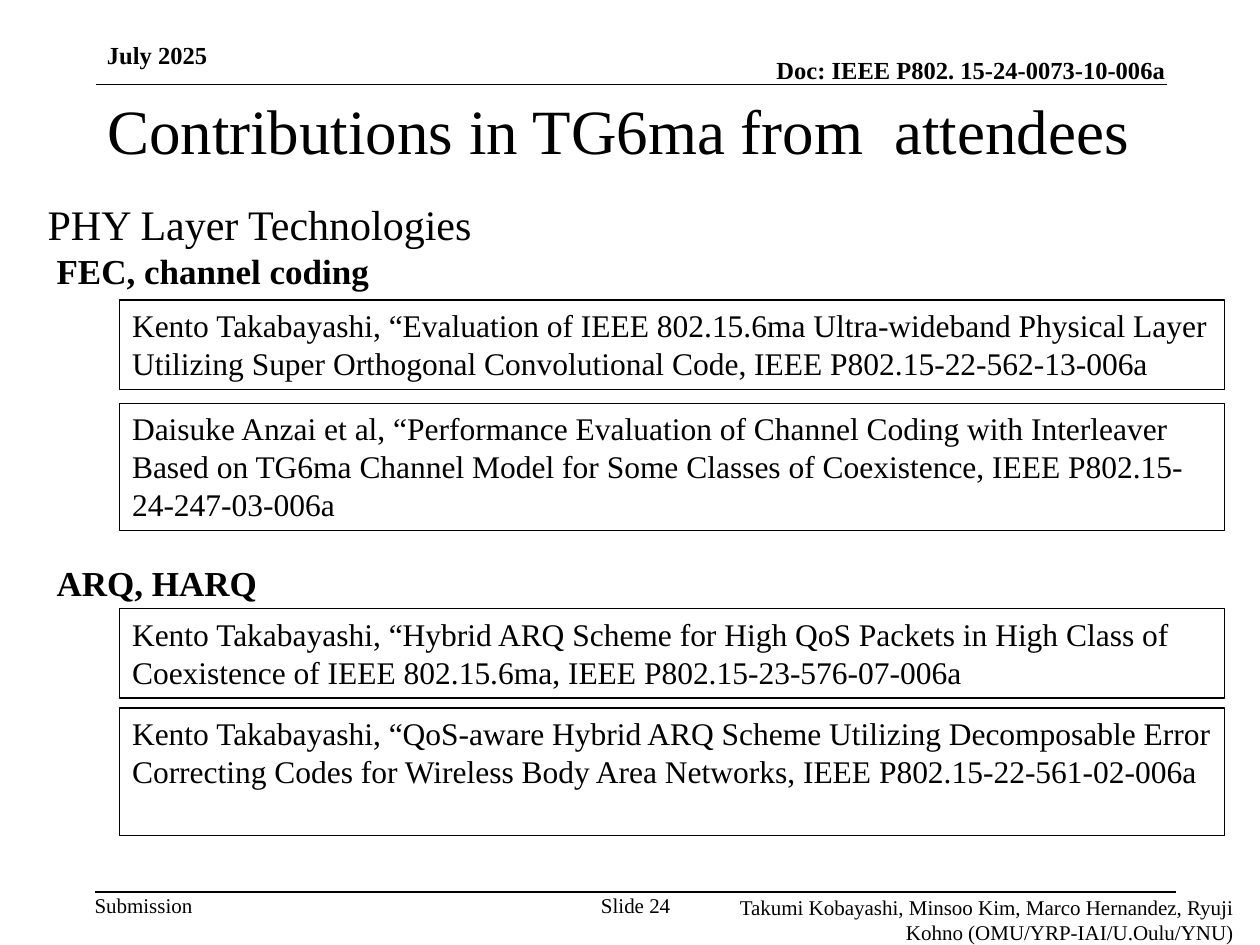
from lxml import etree
from pptx import Presentation
from pptx.dml.color import RGBColor
from pptx.enum.shapes import MSO_CONNECTOR, MSO_SHAPE
from pptx.enum.text import MSO_ANCHOR, MSO_AUTO_SIZE, PP_ALIGN
from pptx.oxml.ns import qn
from pptx.util import Inches, Pt

RECTANGLE = MSO_SHAPE.RECTANGLE
STRAIGHT = MSO_CONNECTOR.STRAIGHT
TOP, MIDDLE, BOTTOM = MSO_ANCHOR.TOP, MSO_ANCHOR.MIDDLE, MSO_ANCHOR.BOTTOM
LEFT, CENTER, RIGHT = PP_ALIGN.LEFT, PP_ALIGN.CENTER, PP_ALIGN.RIGHT
FIXED_SIZE = MSO_AUTO_SIZE.NONE
TITLE_ONLY = 5

COLORS = {"ink": "000000", "paper": "FFFFFF"}
FONT = "Times New Roman"
NO_INSETS = (0, 0, 0, 0)
EVEN_INSETS = (0.1, 0.1, 0.1, 0.1)
TEXT_INSETS = (0.1, 0.05, 0.1, 0.05)

SECTIONS = [
    {
        "heading": "FEC, channel coding",
        "top": 1.93,
        "citations": [
            (2.38, 0.71, "Kento Takabayashi, “Evaluation of IEEE 802.15.6ma Ultra-wideband Physical Layer "
             "Utilizing Super Orthogonal Convolutional Code, IEEE P802.15-22-562-13-006a"),
            (3.2, 1.01, "Daisuke Anzai et al, “Performance Evaluation of Channel Coding with Interleaver "
             "Based on TG6ma Channel Model for Some Classes of Coexistence, IEEE P802.15-24-247-03-006a"),
        ],
    },
    {
        "heading": "ARQ, HARQ",
        "top": 4.41,
        "citations": [
            (4.83, 0.71, "Kento Takabayashi, “Hybrid ARQ Scheme for High QoS Packets in High Class of "
             "Coexistence of IEEE 802.15.6ma, IEEE P802.15-23-576-07-006a"),
            (5.62, 1.01, "Kento Takabayashi, “QoS-aware Hybrid ARQ Scheme Utilizing Decomposable Error "
             "Correcting Codes for Wireless Body Area Networks, IEEE P802.15-22-561-02-006a"),
        ],
    },
]


def color(name):
    """Return the named colour."""
    return RGBColor.from_string(COLORS[name])


def write_text(shape, text, size, bold=False, align=LEFT, anchor=TOP, insets=TEXT_INSETS):
    """Fill a shape with one formatted paragraph."""
    left, top, right, bottom = map(Inches, insets)
    frame = shape.text_frame
    frame.text = text
    paragraph = frame.paragraphs[0]
    paragraph.alignment = align
    font = paragraph.runs[0].font
    font.color.rgb = color("ink")
    formats = [
        (frame, {"word_wrap": True, "auto_size": FIXED_SIZE, "vertical_anchor": anchor,
                 "margin_left": left, "margin_top": top,
                 "margin_right": right, "margin_bottom": bottom}),
        (font, {"name": FONT, "size": Pt(size), "bold": bold}),
    ]
    for target, values in formats:
        for name, value in values.items():
            setattr(target, name, value)


def add_text(slide, box, text, size, **options):
    """Add a text box in the given box."""
    write_text(slide.shapes.add_textbox(*map(Inches, box)), text, size, **options)


def add_rule(slide, left, right, top):
    """Add a horizontal rule."""
    rule = slide.shapes.add_connector(
        STRAIGHT, Inches(left), Inches(top), Inches(right), Inches(top))
    rule.line.color.rgb = color("ink")
    rule.line.width = Pt(1)
    etree.SubElement(rule.line._get_or_add_ln().getparent(), qn("a:effectLst"))


def add_header(slide, left, top, width):
    """Place the date, the document number and the rule below them."""
    add_text(slide, (left, top, 1.75, 0.24), "July 2025", 14,
             bold=True, anchor=BOTTOM, insets=EVEN_INSETS)
    add_text(slide, (left + width - 5.25, top + 0.02, 5.25, 0.24),
             "Doc: IEEE P802. 15-24-0073-10-006a", 14,
             bold=True, align=RIGHT, anchor=BOTTOM, insets=NO_INSETS)
    add_rule(slide, left + 0.01, left + width + 0.01, top + 0.26)


def add_title(slide, left, top, width, height):
    """Move and format the title placeholder."""
    title = slide.shapes.title
    box = {"left": left, "top": top, "width": width, "height": height}
    for name, value in box.items():
        setattr(title, name, Inches(value))
    write_text(title, "Contributions in TG6ma from  attendees", 36,
               anchor=MIDDLE, insets=EVEN_INSETS)


def add_citation(slide, box, text):
    """Add one outlined citation."""
    shape = slide.shapes.add_shape(RECTANGLE, *map(Inches, box))
    shape.shadow.inherit = False
    shape.fill.background()
    shape.line.color.rgb = color("ink")
    shape.line.width = Pt(0.75)
    write_text(shape, text, 18)


def add_section(slide, left, width, section):
    """Place a heading and the citations indented below it."""
    add_text(slide, (left, section["top"], 2.68, 0.44), section["heading"], 20, bold=True)
    for top, height, text in section["citations"]:
        add_citation(slide, (left + 0.6, top, width - 0.6, height), text)


def add_footer(slide, left, top, width):
    """Place the footer rule, label, slide number and authors."""
    add_rule(slide, left, left + width, top)
    add_text(slide, (left, top, 0.78, 0.2), "Submission", 12, insets=NO_INSETS)
    add_text(slide, (left + 4, top, 0.59, 0.2), "Slide 24", 12, align=CENTER, insets=NO_INSETS)
    add_text(slide, (left + 4.59, top - 0.08, 4.55, 0.31),
             "Takumi Kobayashi, Minsoo Kim, Marco Hernandez, Ryuji Kohno "
             "(OMU/YRP-IAI/U.Oulu/YNU)", 12, align=RIGHT, insets=EVEN_INSETS)


def main():
    """Build and save the presentation."""
    presentation = Presentation()
    presentation.slide_width, presentation.slide_height = Inches(10), Inches(7.5)
    slide = presentation.slides.add_slide(presentation.slide_layouts[TITLE_ONLY])
    slide.background.fill.solid()
    slide.background.fill.fore_color.rgb = color("paper")
    add_header(slide, 0.75, 0.41, 8.5)
    add_title(slide, 0.75, 0.75, 8.5, 0.56)
    add_text(slide, (0.28, 1.53, 4.22, 0.5), "PHY Layer Technologies", 24)
    for section in SECTIONS:
        add_section(slide, 0.35, 9.37, section)
    add_footer(slide, 0.75, 7.08, 8.58)
    presentation.save("out.pptx")


if __name__ == "__main__":
    main()
